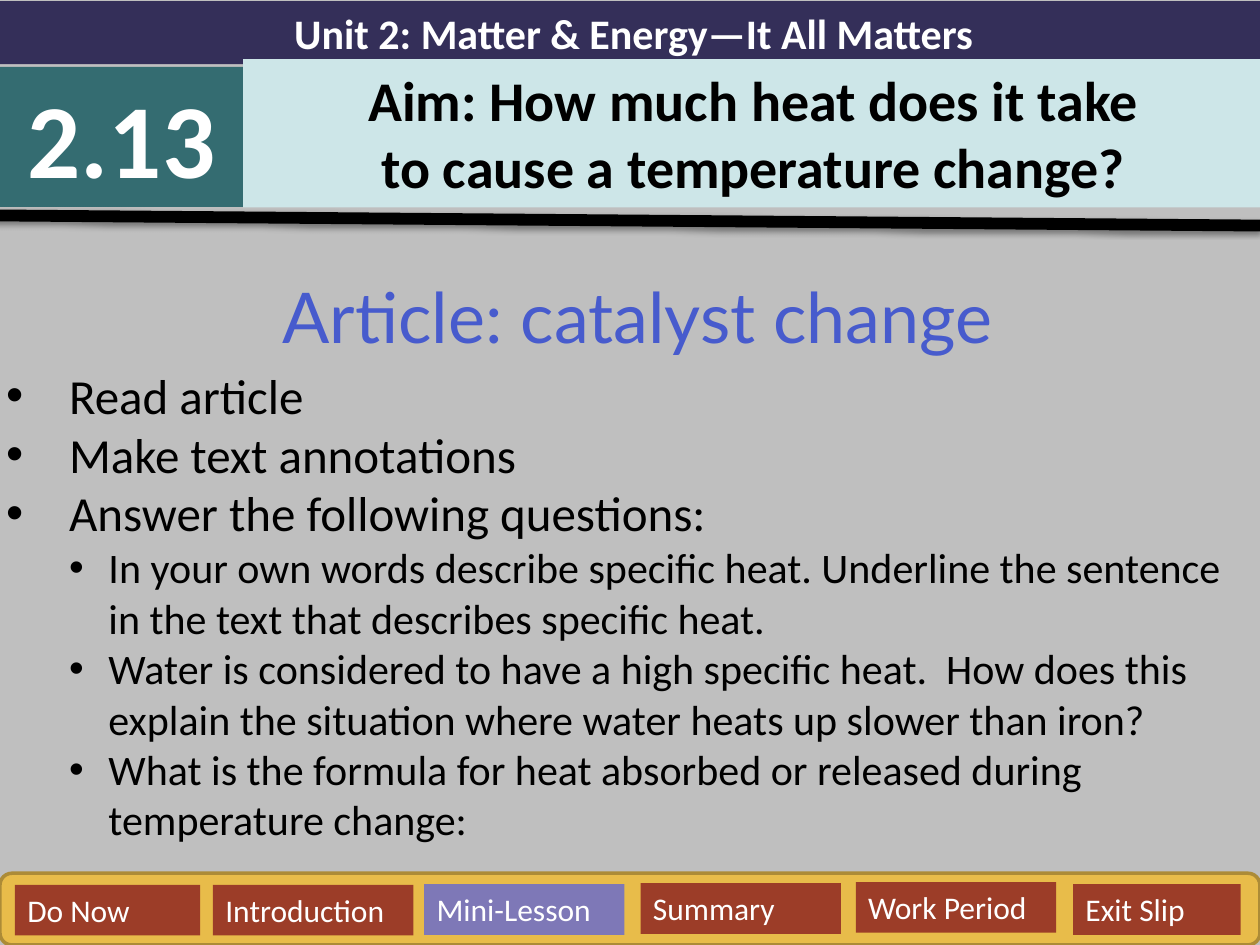
"""Build the lesson slide 2.13 about heat and temperature change."""
from dataclasses import dataclass

from lxml import etree
from pptx import Presentation
from pptx.dml.color import RGBColor
from pptx.enum.shapes import MSO_CONNECTOR, MSO_SHAPE
from pptx.enum.text import MSO_ANCHOR, PP_ALIGN
from pptx.oxml import parse_xml
from pptx.oxml.ns import nsdecls, qn
from pptx.util import Pt

RECTANGLE = MSO_SHAPE.RECTANGLE
ROUNDED = MSO_SHAPE.ROUNDED_RECTANGLE
STRAIGHT = MSO_CONNECTOR.STRAIGHT
TOP = MSO_ANCHOR.TOP
LEFT = PP_ALIGN.LEFT
CENTER = PP_ALIGN.CENTER


@dataclass(frozen=True)
class Theme:
    background: str = "BFBFBF"
    unit: str = "342F59"
    number: str = "346C71"
    aim: str = "CDE6E8"
    bar: str = "E8BC4A"
    bar_line: str = "AC8B37"
    tab: str = "9C3D28"
    active_tab: str = "7E78B7"
    title: str = "475BCD"
    black: str = "000000"
    white: str = "FFFFFF"
    font: str = "Calibri"
    title_font: str = "Lato"
    number_size: int = 60
    title_size: int = 40
    aim_size: int = 32
    body_size: int = 28
    question_size: int = 24
    tab_size: int = 18


theme = Theme()


def add_box(box, fill=None, outline=None, preset=RECTANGLE):
    position = [Pt(length) for length in box]
    if fill is None:
        return slide.shapes.add_textbox(*position)
    shape = slide.shapes.add_shape(preset, *position)
    shape.shadow.inherit = False
    shape.fill.solid()
    shape.fill.fore_color.rgb = RGBColor.from_string(fill)
    if outline:
        shape.line.color.rgb = RGBColor.from_string(outline)
        shape.line.width = Pt(2)
    else:
        shape.line.fill.background()
    return shape


def write(frame, text, size, color=theme.black, font=theme.font, bold=False,
          align=LEFT, spacing=None, level=0, indent=None):
    frame.word_wrap = True
    frame.vertical_anchor = TOP
    paragraph = frame.paragraphs[0] if not frame.text else frame.add_paragraph()
    paragraph.alignment = align
    paragraph.level = level
    if spacing:
        paragraph.line_spacing = spacing
    run = paragraph.add_run()
    run.text = text
    run.font.size = Pt(size)
    run.font.name = font
    run.font.bold = bold
    run.font.color.rgb = RGBColor.from_string(color)
    if indent:
        margin, hanging = indent
        properties = paragraph._p.get_or_add_pPr()
        properties.set("marL", str(Pt(margin)))
        properties.set("indent", str(Pt(-hanging)))
        etree.SubElement(properties, qn("a:buFont")).set("typeface", "Arial")
        etree.SubElement(properties, qn("a:buChar")).set("char", "•")


presentation = Presentation()
presentation.slide_width = Pt(720)
presentation.slide_height = Pt(540)
slide = presentation.slides.add_slide(presentation.slide_layouts[6])
slide.background.fill.solid()
slide.background.fill.fore_color.rgb = RGBColor.from_string(theme.background)

unit = add_box((0, 0.7, 724.3, 36), theme.unit)
write(unit.text_frame, "Unit 2: Matter & Energy—It All Matters", theme.question_size,
      color=theme.white, bold=True, align=CENTER)

number = add_box((0, 38.2, 139, 80), theme.number)
write(number.text_frame, "2.13", theme.number_size,
      color=theme.white, bold=True, align=CENTER)

aim = add_box((139, 33.8, 583.2, 84.8), theme.aim)
for line in ("Aim: How much heat does it take", " to cause a temperature change? "):
    write(aim.text_frame, line, theme.aim_size, bold=True, align=CENTER)

divider = slide.shapes.add_connector(STRAIGHT, Pt(-3.6), Pt(123.1), Pt(720), Pt(128.9))
divider.line.color.rgb = RGBColor.from_string(theme.black)
divider.line.width = Pt(6.75)
divider._element.spPr.append(parse_xml(
    f'<a:effectLst {nsdecls("a")}>'
    f'<a:outerShdw blurRad="{Pt(3.1)}" dist="{Pt(1.6)}" dir="5400000" rotWithShape="0">'
    f'<a:srgbClr val="{theme.black}"><a:alpha val="38000"/></a:srgbClr>'
    '</a:outerShdw></a:effectLst>'))

add_box((0, 499, 720, 41), theme.bar, outline=theme.bar_line, preset=ROUNDED)
tabs = (
    ("Do Now", 8.6, 505.6, 105.8, theme.tab),
    ("Introduction", 121.7, 505.6, 114.5, theme.tab),
    ("Mini-Lesson", 242.4, 505.2, 114.5, theme.active_tab),
    ("Summary", 366, 504.7, 114.5, theme.tab),
    ("Work Period", 489, 504, 114.5, theme.tab),
    ("Exit Slip", 613.2, 505.2, 95.8, theme.tab),
)
for label, left, top, width, color in tabs:
    tab = add_box((left, top, width, 29), color)
    write(tab.text_frame, label, theme.tab_size, color=theme.white)

title = add_box((8.6, 128.9, 711.4, 358.6))
write(title.text_frame, "Article: catalyst change", theme.title_size,
      color=theme.title, font=theme.title_font, align=CENTER, spacing=1.5)

body = add_box((-3.6, 205.2, 728.6, 351.4))
tasks = ("Read article", "Make text annotations", "Answer the following questions:")
questions = (
    "In your own words describe specific heat. Underline the sentence in the text "
    "that describes specific heat.",
    "Water is considered to have a high specific heat.  How does this explain the "
    "situation where water heats up slower than iron?",
    "What is the formula for heat absorbed or released during temperature change:",
)
for task in tasks:
    write(body.text_frame, task, theme.body_size, indent=(36, 36))
for question in questions:
    write(body.text_frame, question, theme.question_size, level=1, indent=(58.5, 22.5))

presentation.save("out.pptx")
